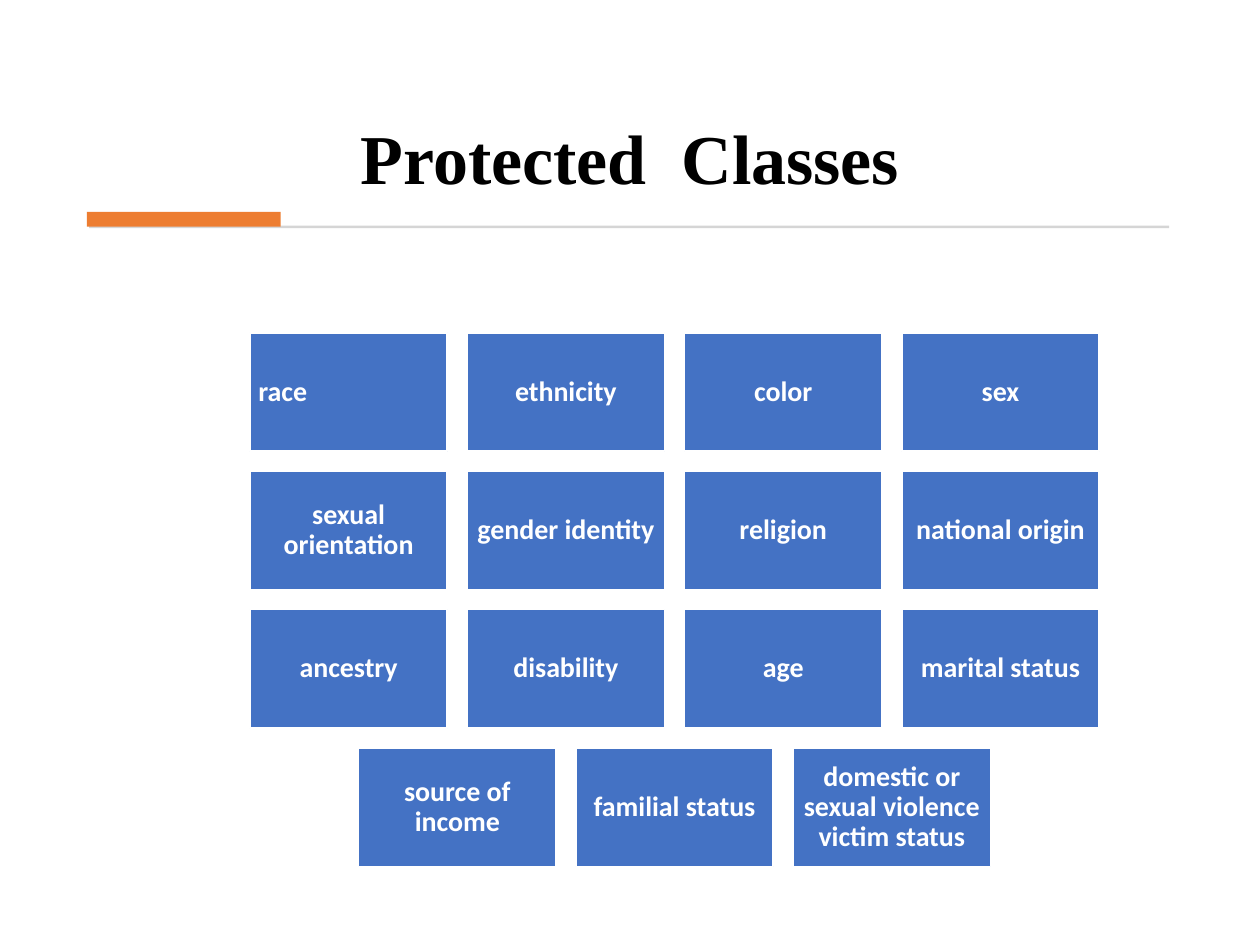
"""Build the Protected Classes slide with a centred grid of tiles."""

from dataclasses import dataclass

from pptx import Presentation
from pptx.dml.color import RGBColor
from pptx.enum.shapes import MSO_SHAPE
from pptx.enum.text import MSO_ANCHOR, MSO_AUTO_SIZE, PP_ALIGN
from pptx.shapes.autoshape import Shape
from pptx.slide import Slide
from pptx.text.text import Font
from pptx.util import Cm, Pt

WHITE = "FFFFFF"
BLACK = "000000"
BLUE = "4472C4"
ORANGE = "ED7D31"
GREY = "D5D5D5"

COLUMNS = 4
GRID_LEFT, GRID_TOP = 5.04, 6.71
TILE_WIDTH, TILE_HEIGHT = 3.98, 2.39
COLUMN_STEP, ROW_STEP = 4.38, 2.79
TILE_INSET = Cm(0.17)


@dataclass(frozen=True)
class Box:
    """Position and size in centimetres."""

    left: float
    top: float
    width: float
    height: float


@dataclass(frozen=True)
class Tile:
    """One protected class and its text alignment."""

    label: str
    alignment: PP_ALIGN = PP_ALIGN.CENTER


TILES = [
    Tile("race", PP_ALIGN.LEFT),
    Tile("ethnicity"),
    Tile("color"),
    Tile("sex"),
    Tile("sexual orientation"),
    Tile("gender identity"),
    Tile("religion"),
    Tile("national origin"),
    Tile("ancestry"),
    Tile("disability"),
    Tile("age"),
    Tile("marital status"),
    Tile("source of income"),
    Tile("familial status"),
    Tile("domestic or sexual violence victim status"),
]


def color(value: str) -> RGBColor:
    """Turn a hex string into a colour."""
    return RGBColor.from_string(value)


def style_font(font: Font, name: str, size: float, value: str) -> None:
    """Set a bold font with its size and colour."""
    font.name = name
    font.size = Pt(size)
    font.bold = True
    font.color.rgb = color(value)


def add_rectangle(slide: Slide, box: Box, fill: str) -> Shape:
    """Add a plain filled rectangle without an outline."""
    shape = slide.shapes.add_shape(
        MSO_SHAPE.RECTANGLE, Cm(box.left), Cm(box.top), Cm(box.width), Cm(box.height)
    )
    shape.shadow.inherit = False
    shape.fill.solid()
    shape.fill.fore_color.rgb = color(fill)
    shape.line.fill.background()
    return shape


def add_tile(slide: Slide, tile: Tile, box: Box) -> None:
    """Add a labelled tile with a white outline."""
    shape = add_rectangle(slide, box, BLUE)
    shape.line.color.rgb = color(WHITE)
    shape.line.width = Pt(1)
    frame = shape.text_frame
    frame.word_wrap = True
    frame.vertical_anchor = MSO_ANCHOR.MIDDLE
    frame.margin_left = frame.margin_right = TILE_INSET
    frame.margin_top = frame.margin_bottom = TILE_INSET
    paragraph = frame.paragraphs[0]
    paragraph.text = tile.label
    paragraph.alignment = tile.alignment
    paragraph.line_spacing = 0.9
    style_font(paragraph.font, "Calibri", 16, WHITE)


def add_tiles(slide: Slide, tiles: list[Tile]) -> None:
    """Lay the tiles out in rows and centre a short last row."""
    for row, start in enumerate(range(0, len(tiles), COLUMNS)):
        row_tiles = tiles[start : start + COLUMNS]
        indent = (COLUMNS - len(row_tiles)) * COLUMN_STEP / 2
        for column, tile in enumerate(row_tiles):
            left = GRID_LEFT + indent + column * COLUMN_STEP
            top = GRID_TOP + row * ROW_STEP
            add_tile(slide, tile, Box(left, top, TILE_WIDTH, TILE_HEIGHT))


def set_title(slide: Slide, text: str, box: Box) -> None:
    """Fill and place the title placeholder."""
    title = slide.shapes.title
    title.left, title.top = Cm(box.left), Cm(box.top)
    title.width, title.height = Cm(box.width), Cm(box.height)
    frame = title.text_frame
    frame.auto_size = MSO_AUTO_SIZE.NONE
    frame.vertical_anchor = MSO_ANCHOR.MIDDLE
    paragraph = frame.paragraphs[0]
    paragraph.text = text
    paragraph.alignment = PP_ALIGN.CENTER
    style_font(paragraph.font, "Times New Roman", 40, BLACK)


def main() -> None:
    """Build and save the presentation."""
    presentation = Presentation()
    presentation.slide_width, presentation.slide_height = Cm(25.4), Cm(19.05)
    slide = presentation.slides.add_slide(presentation.slide_layouts[5])
    add_rectangle(slide, Box(1.8, 4.55, 21.77, 0.05), GREY)
    add_rectangle(slide, Box(1.75, 4.27, 3.91, 0.3), ORANGE)
    add_tiles(slide, TILES)
    set_title(slide, "Protected  Classes", Box(0, 2.08, 25.4, 2.15))
    presentation.save("out.pptx")


if __name__ == "__main__":
    main()
